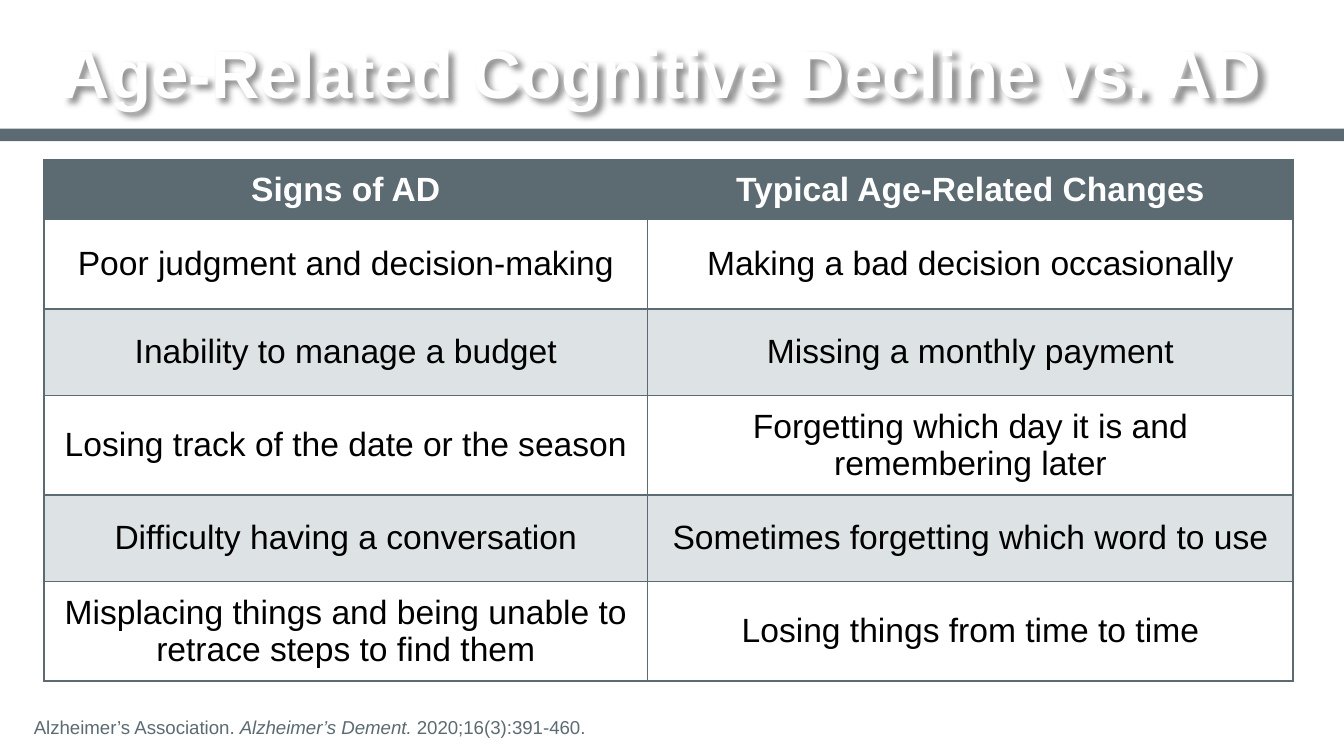
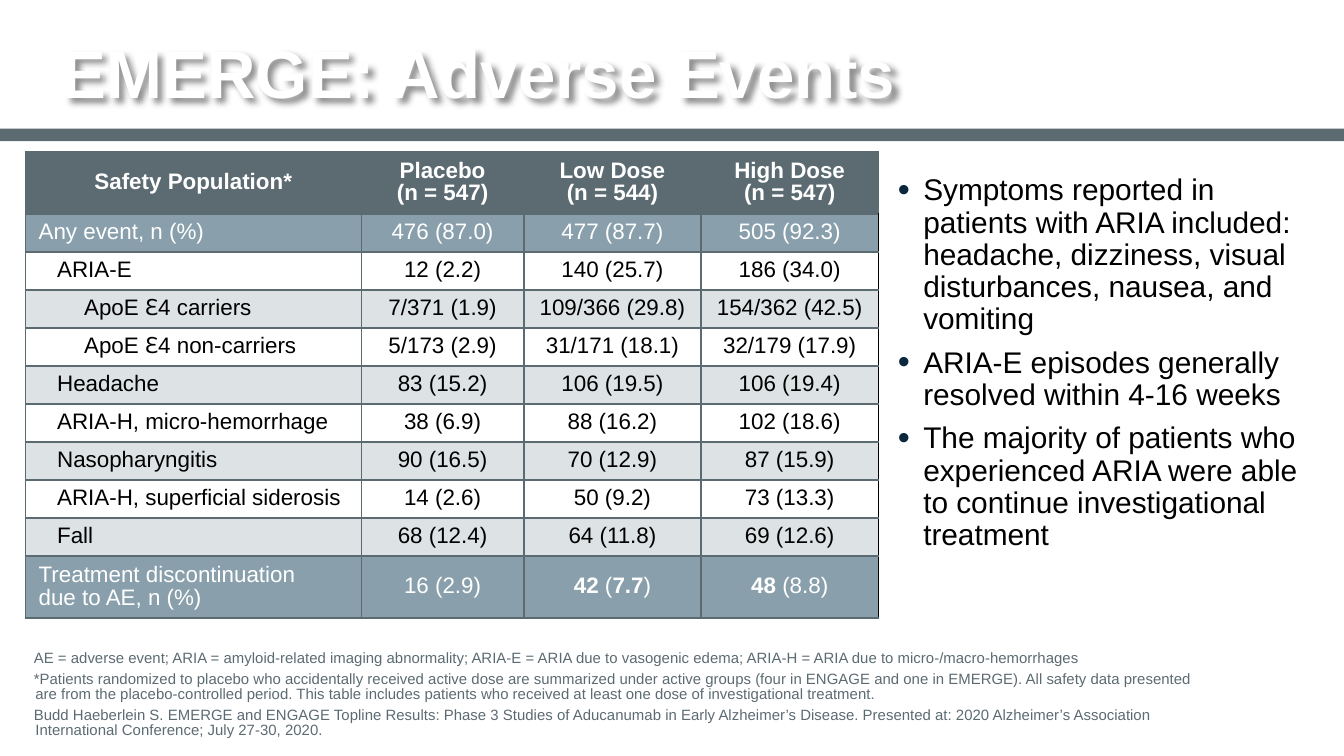
import copy

import lxml.etree
import pptx
import pptx.dml.color
import pptx.enum.shapes
import pptx.enum.text
import pptx.oxml.ns
import pptx.util

Cm, Pt = pptx.util.Cm, pptx.util.Pt
RGBColor = pptx.dml.color.RGBColor
ALIGN, ANCHOR = pptx.enum.text.PP_ALIGN, pptx.enum.text.MSO_ANCHOR
qn = pptx.oxml.ns.qn

FONT = "Arial"
SLATE = RGBColor(0x5C, 0x6B, 0x72)
STEEL = RGBColor(0x89, 0xA0, 0xAC)
MIST = RGBColor(0xDD, 0xE2, 0xE4)
NAVY = RGBColor(0x0B, 0x27, 0x3E)
WHITE = RGBColor(0xFF, 0xFF, 0xFF)
BLACK = RGBColor(0, 0, 0)


def write(para, text, size, color, bold=False, emphasis="bold"):
    """Fill a paragraph; text between | marks is emphasised, \\v breaks the line."""
    for number, piece in enumerate(text.split("|")):
        for line_number, line in enumerate(piece.split("\v")):
            if line_number:
                para.add_line_break()
            if not line:
                continue
            span = para.add_run()
            span.text = line
            span.font.name, span.font.size, span.font.bold = FONT, Pt(size), bold
            span.font.color.rgb = color
            if number % 2:
                setattr(span.font, emphasis, True)
    for line_break in para._p.findall(qn("a:br")):
        line_break.append(copy.deepcopy(para.runs[0]._r.rPr))


def add_text(page, place, margins, texts, size, color, anchor, spacing, gap=0,
             indent=0, bullet=False, bold=False):
    box = page.shapes.add_textbox(*[Cm(length) for length in place])
    frame = box.text_frame
    frame.word_wrap = True
    frame.vertical_anchor = anchor
    (frame.margin_left, frame.margin_top,
     frame.margin_right, frame.margin_bottom) = [Cm(length) for length in margins]
    for number, text in enumerate(texts):
        para = frame.add_paragraph() if number else frame.paragraphs[0]
        para.line_spacing = spacing
        para.space_before = Pt(gap if number else 0)
        properties = para._p.get_or_add_pPr()
        properties.set("marL", str(Cm(indent)))
        properties.set("indent", str(-Cm(indent)))
        if bullet:
            bullet_color = lxml.etree.SubElement(properties, qn("a:buClr"))
            lxml.etree.SubElement(bullet_color, qn("a:srgbClr"), val=str(NAVY))
            lxml.etree.SubElement(properties, qn("a:buSzPct"), val="115000")
            lxml.etree.SubElement(properties, qn("a:buFont"), typeface=FONT)
            lxml.etree.SubElement(properties, qn("a:buChar"), char="•")
        write(para, text, size, color, bold, emphasis="italic")
    return box


deck = pptx.Presentation()
deck.slide_width, deck.slide_height = Cm(25.4), Cm(14.29)

# Shared title and band
pages = []
for title in ["Age-Related Cognitive Decline vs. AD", "EMERGE: Adverse Events"]:
    page = deck.slides.add_slide(deck.slide_layouts[6])
    pages.append(page)
    band = page.shapes.add_shape(pptx.enum.shapes.MSO_SHAPE.RECTANGLE,
                                 0, Cm(2.43), deck.slide_width, Cm(0.24))
    band.shadow.inherit = False
    band.fill.solid()
    band.fill.fore_color.rgb = SLATE
    band.line.fill.background()

    heading = add_text(page, (1.17, 0.69, 23.09, 1.57), (0, 0.13, 0, 0.13), [title],
                       36, WHITE, ANCHOR.MIDDLE, 0.85, bold=True)
    effects = lxml.etree.SubElement(heading._element.spPr, qn("a:effectLst"))
    shadow = lxml.etree.SubElement(effects, qn("a:outerShdw"), blurRad=str(Pt(3)),
                                   dist=str(Pt(3)), dir="2700000", algn="tl")
    shade = lxml.etree.SubElement(shadow, qn("a:srgbClr"), val=str(BLACK))
    lxml.etree.SubElement(shade, qn("a:alpha"), val="43000")
decline_page, events_page = pages

# Table contents
decline_rows = [
    ("Signs of AD", "Typical Age-Related Changes"),
    ("Poor judgment and decision-making", "Making a bad decision occasionally"),
    ("Inability to manage a budget", "Missing a monthly payment"),
    ("Losing track of the date or the season",
     "Forgetting which day it is and remembering later"),
    ("Difficulty having a conversation", "Sometimes forgetting which word to use"),
    ("Misplacing things and being unable to retrace steps to find them",
     "Losing things from time to time"),
]
event_rows = [
    ("Safety Population*", "Placebo\v(n = 547)", "Low Dose\v(n = 544)",
     "High Dose\v(n = 547)"),
    ("Any event, n (%)", "476 (87.0)", "477 (87.7)", "505 (92.3)"),
    ("ARIA-E", "12 (2.2)", "140 (25.7)", "186 (34.0)"),
    ("ApoE ℇ4 carriers", "7/371 (1.9)", "109/366 (29.8)", "154/362 (42.5)"),
    ("ApoE ℇ4 non-carriers", "5/173 (2.9)", "31/171 (18.1)", "32/179 (17.9)"),
    ("Headache", "83 (15.2)", "106 (19.5)", "106 (19.4)"),
    ("ARIA-H, micro-hemorrhage", "38 (6.9)", "88 (16.2)", "102 (18.6)"),
    ("Nasopharyngitis", "90 (16.5)", "70 (12.9)", "87 (15.9)"),
    ("ARIA-H, superficial siderosis", "14 (2.6)", "50 (9.2)", "73 (13.3)"),
    ("Fall", "68 (12.4)", "64 (11.8)", "69 (12.6)"),
    ("Treatment discontinuation\vdue to AE, n (%)", "16 (2.9)", "|42| (|7.7|)",
     "|48| (8.8)"),
]
event_indents = [0, 0, 0.35, 0.86, 0.86] + [0.35] * 5 + [0]

# Page, left, top, column widths, row heights, rows, row fills, size, spacing, margins
tables = [
    (decline_page, 0.83, 3.02, [11.41, 12.2], [1.08, 1.7, 1.63, 1.79, 1.63, 1.79],
     decline_rows, [SLATE, WHITE, MIST, WHITE, MIST, WHITE], 18, 1.0, (0.18, 0.18)),
    (events_page, 0.48, 2.87, [6.35, 3.07, 3.35, 3.35], [1.1] + [0.68] * 9 + [1.11],
     event_rows, [SLATE, STEEL] + [WHITE, MIST] * 4 + [STEEL], 12, 0.9, (0.25, 0.13)),
]
for page, left, top, widths, heights, rows, fills, size, spacing, margins in tables:
    table = page.shapes.add_table(len(rows), len(widths), Cm(left), Cm(top),
                                  Cm(sum(widths)), Cm(sum(heights))).table
    table.horz_banding = False
    for column, width in zip(table.columns, widths):
        column.width = Cm(width)
    for row_number, texts in enumerate(rows):
        table.rows[row_number].height = Cm(heights[row_number])
        fill = fills[row_number]
        for column_number, text in enumerate(texts):
            cell = table.cell(row_number, column_number)
            cell.vertical_anchor = ANCHOR.MIDDLE
            cell.margin_left = cell.margin_right = Cm(margins[0])
            cell.margin_top = cell.margin_bottom = Cm(margins[1])

            # Borders, with a black outer edge beside the event counts
            black_edge = (rows is event_rows and row_number
                          and column_number == len(texts) - 1)
            for side in ["L", "R", "T", "B"]:
                border = lxml.etree.SubElement(cell._tc.get_or_add_tcPr(),
                                               qn("a:ln" + side), w=str(Pt(1)))
                stroke = lxml.etree.SubElement(border, qn("a:solidFill"))
                color = BLACK if black_edge and side == "R" else SLATE
                lxml.etree.SubElement(stroke, qn("a:srgbClr"), val=str(color))
            cell.fill.solid()
            cell.fill.fore_color.rgb = fill

            para = cell.text_frame.paragraphs[0]
            para.line_spacing = spacing
            para.alignment = ALIGN.CENTER
            if rows is event_rows and row_number and column_number == 0:
                para.alignment = ALIGN.LEFT
                para._p.get_or_add_pPr().set("marL", str(Cm(event_indents[row_number])))
            write(para, text, size, WHITE if fill in (SLATE, STEEL) else BLACK,
                  bold=row_number == 0)

# Findings beside the event table
add_text(events_page, (16.97, 3.18, 7.95, 7.65), (0, 0.13, 0, 0.13), [
    "Symptoms reported in patients with ARIA included: headache, dizziness, "
    "visual disturbances, nausea, and vomiting",
    "ARIA-E episodes generally resolved within 4-16 weeks",
    "The majority of patients who experienced ARIA were able to continue "
    "investigational treatment",
], 16, BLACK, ANCHOR.TOP, 0.9, gap=6, indent=0.48, bullet=True)

# Footnotes
footer_margins = (0.64, 0, 0, 0.33)
add_text(decline_page, (0, 13.59, 23.09, 0.7), footer_margins, [
    "Alzheimer’s Association. |Alzheimer’s Dement. |2020;16(3):391-460.",
], 10, SLATE, ANCHOR.BOTTOM, 0.85, indent=0.71)
add_text(events_page, (0, 12.29, 22.73, 2), footer_margins, [
    "AE = adverse event; ARIA = amyloid-related imaging abnormality; ARIA-E = ARIA due "
    "to vasogenic edema; ARIA-H = ARIA due to micro-/macro-hemorrhages",
    "*Patients randomized to placebo who accidentally received active dose are "
    "summarized under active groups (four in ENGAGE and one in EMERGE). All safety data "
    "presented are from the placebo-controlled period. This table includes patients who "
    "received at least one dose of investigational treatment.",
    "Budd Haeberlein S. EMERGE and ENGAGE Topline Results: Phase 3 Studies of "
    "Aducanumab in Early Alzheimer’s Disease. Presented at: 2020 Alzheimer’s "
    "Association International Conference; July 27-30, 2020.",
], 8, SLATE, ANCHOR.BOTTOM, 0.85, gap=3, indent=0.03)

deck.save("out.pptx")
